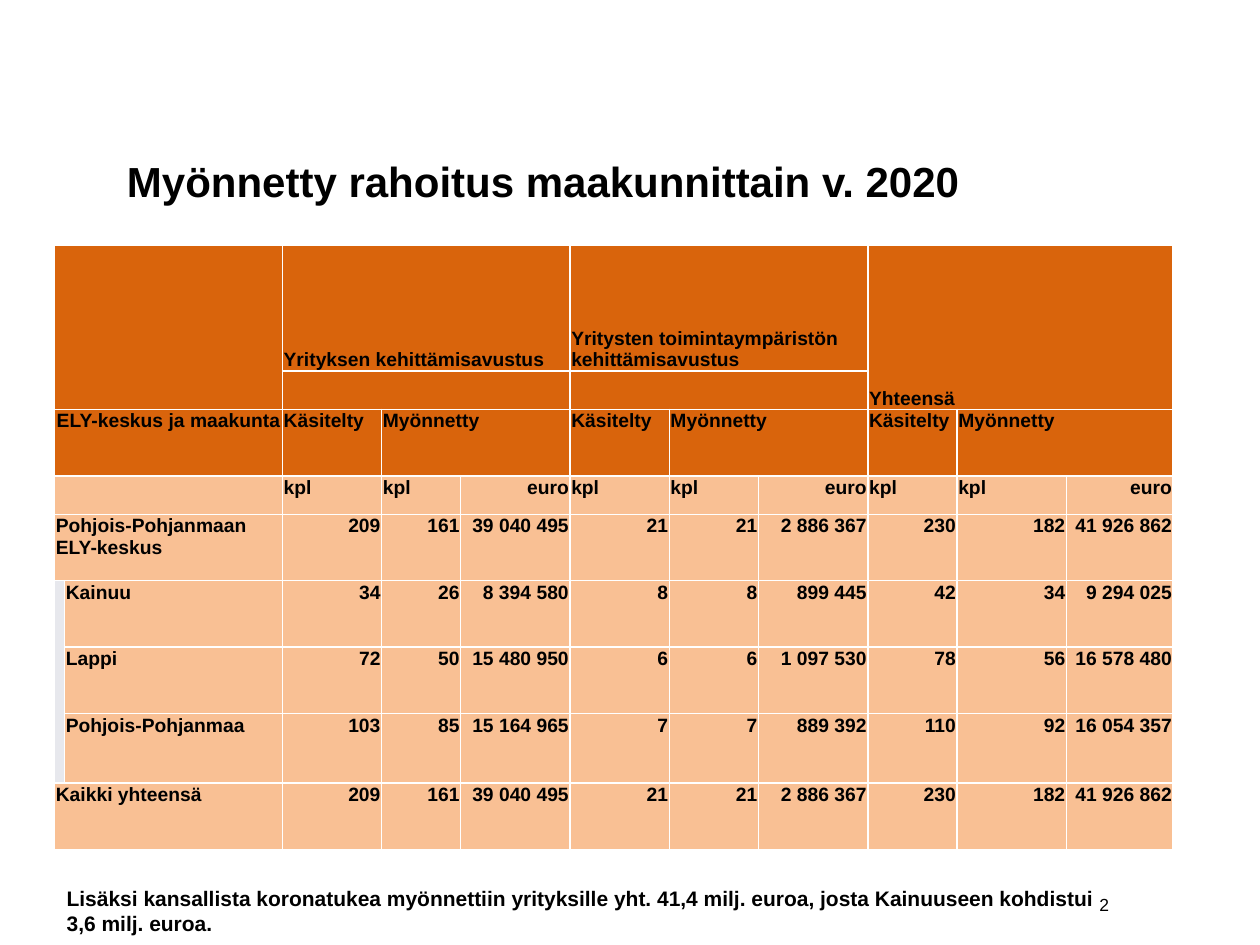
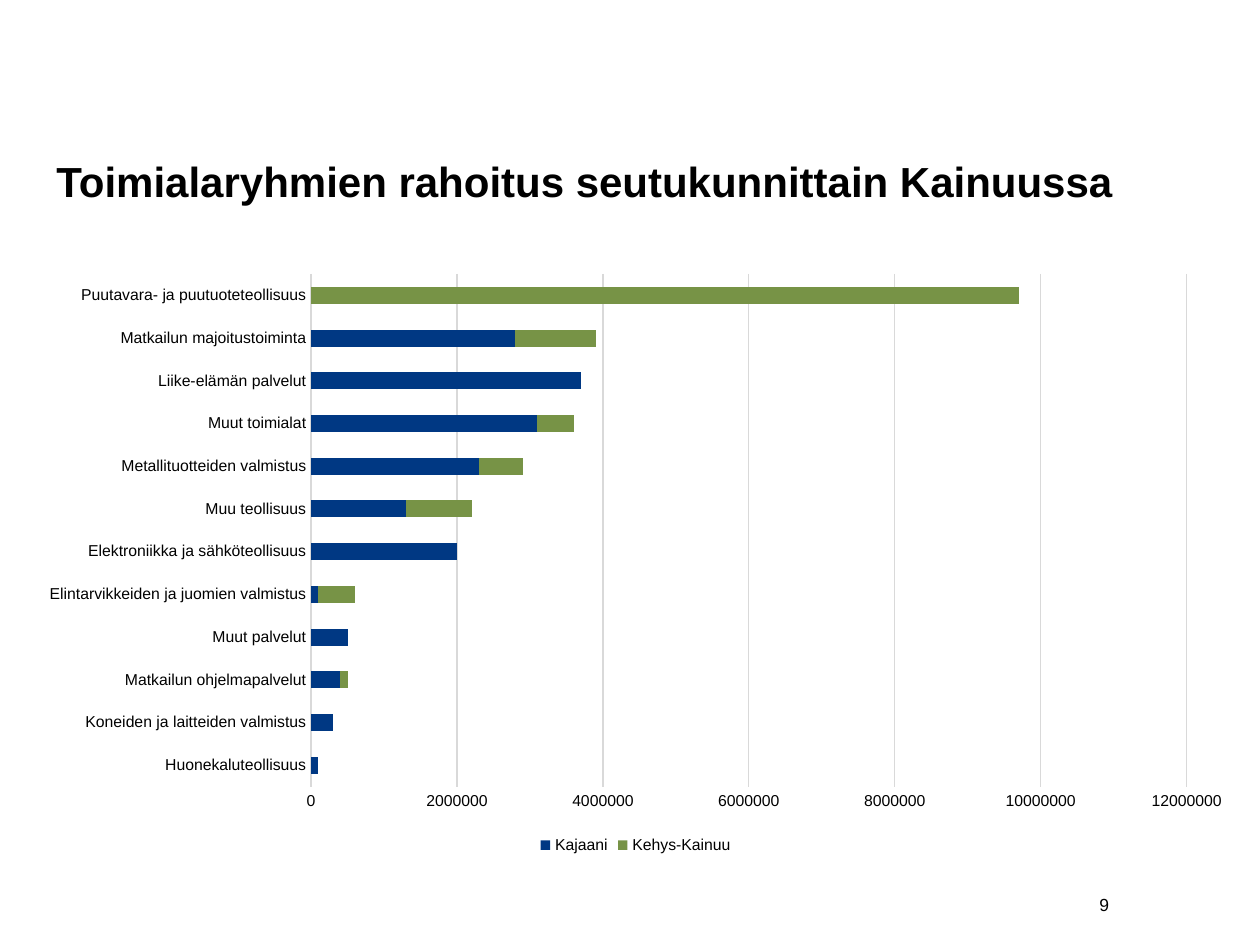
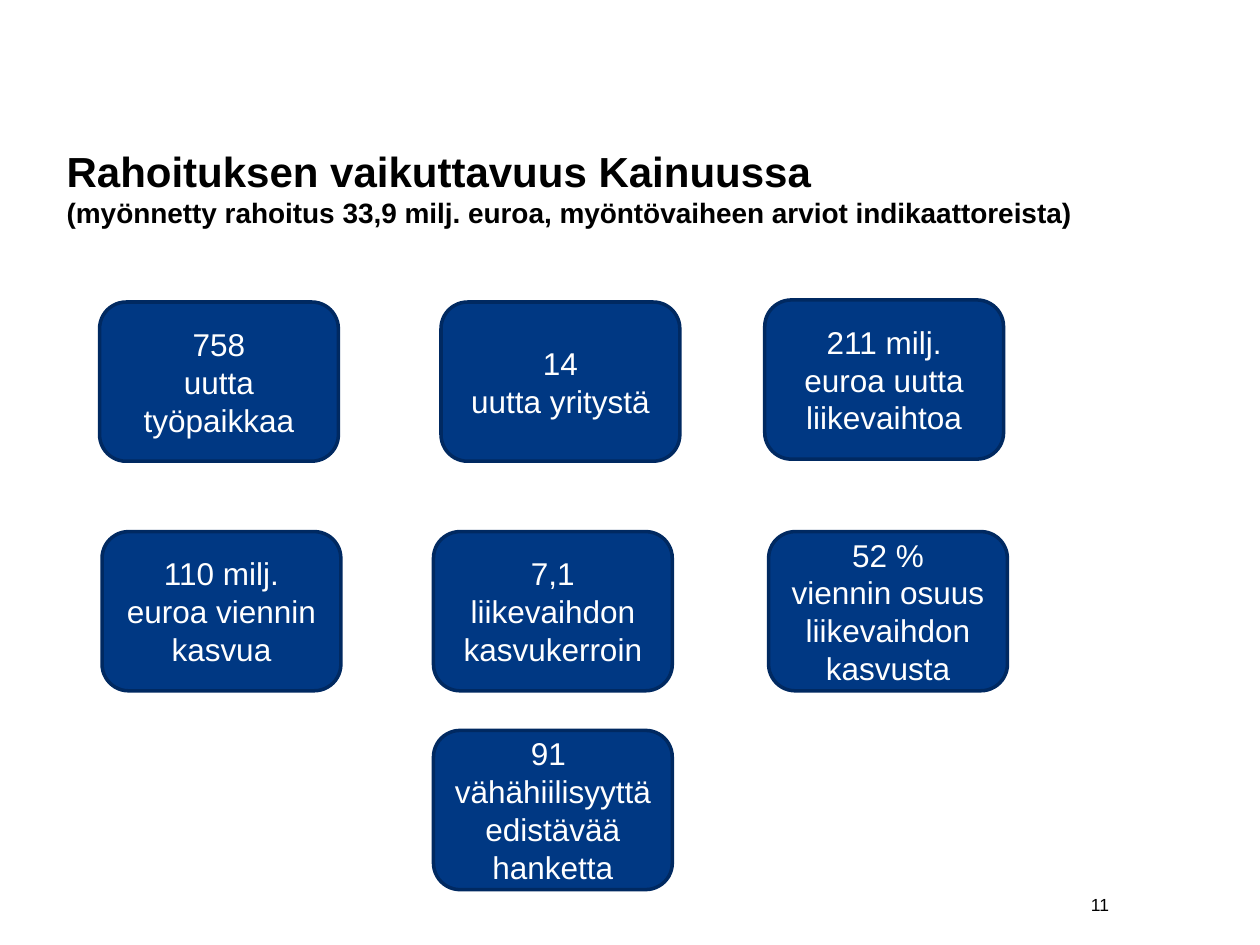
from dataclasses import dataclass

from lxml import etree
from pptx import Presentation
from pptx.chart.data import CategoryChartData
from pptx.dml.color import RGBColor
from pptx.enum.chart import XL_CHART_TYPE, XL_LEGEND_POSITION, XL_TICK_MARK
from pptx.enum.shapes import MSO_SHAPE
from pptx.enum.text import MSO_ANCHOR, PP_ALIGN
from pptx.oxml.ns import qn
from pptx.util import Pt

TOP, MIDDLE, BOTTOM = MSO_ANCHOR.TOP, MSO_ANCHOR.MIDDLE, MSO_ANCHOR.BOTTOM
LEFT, CENTER, RIGHT = PP_ALIGN.LEFT, PP_ALIGN.CENTER, PP_ALIGN.RIGHT
BAR_STACKED = XL_CHART_TYPE.BAR_STACKED
LEGEND_BOTTOM = XL_LEGEND_POSITION.BOTTOM
NO_TICK = XL_TICK_MARK.NONE
ROUNDED = MSO_SHAPE.ROUNDED_RECTANGLE

FONT = "Arial"
BLACK = RGBColor(0x00, 0x00, 0x00)
WHITE = RGBColor(0xFF, 0xFF, 0xFF)
ORANGE = RGBColor(0xD9, 0x64, 0x0C)
PEACH = RGBColor(0xF9, 0xC0, 0x94)
PALE_GREY = RGBColor(0xE7, 0xE8, 0xED)
GRID_GREY = RGBColor(0xD9, 0xD9, 0xD9)
BLUE = RGBColor(0x00, 0x38, 0x83)
DARK_BLUE = RGBColor(0x00, 0x29, 0x61)
GREEN = RGBColor(0x77, 0x93, 0x46)


@dataclass(frozen=True)
class Area:
    left: float
    top: float
    width: float
    height: float

    def lengths(self):
        return Pt(self.left), Pt(self.top), Pt(self.width), Pt(self.height)


@dataclass(frozen=True)
class Merge:
    row: int
    column: int
    rows: int
    columns: int


@dataclass(frozen=True)
class Indicator:
    left: float
    top: float
    lines: tuple


@dataclass(frozen=True)
class Region:
    name: str
    color: RGBColor
    millions: tuple


PAGE_NUMBER_AREA = Area(609.1, 502.6, 31.7, 28.1)

TABLE_AREA = Area(31.2, 139.9, 639.3, 345.5)
COLUMN_WIDTHS = (5.7, 124.5, 56.7, 45.2, 62.5, 56.7, 51, 62.5, 51, 62.5, 61)
ROW_HEIGHTS = (72, 22, 38, 22, 38, 38, 38, 39.5, 38)
HEADER_ROWS = 3
FIRST_NUMBER_ROW = 4
FIRST_NUMBER_COLUMN = 2
PROVINCE_ROWS = range(5, 8)
FUNDING_ROWS = (
    ("", "", "Yrityksen kehittämisavustus", "", "",
     "Yritysten toimintaympäristön kehittämisavustus", "", "", "Yhteensä", "", ""),
    ("",) * 11,
    ("ELY-keskus ja maakunta", "") + ("Käsitelty", "Myönnetty", "") * 3,
    ("", "") + ("kpl", "kpl", "euro") * 3,
    ("Pohjois-Pohjanmaan ELY-keskus", "", "209", "161", "39 040 495",
     "21", "21", "2 886 367", "230", "182", "41 926 862"),
    ("", "Kainuu", "34", "26", "8 394 580", "8", "8", "899 445", "42", "34", "9 294 025"),
    ("", "Lappi", "72", "50", "15 480 950", "6", "6", "1 097 530", "78", "56", "16 578 480"),
    ("", "Pohjois-Pohjanmaa", "103", "85", "15 164 965",
     "7", "7", "889 392", "110", "92", "16 054 357"),
    ("Kaikki yhteensä", "", "209", "161", "39 040 495",
     "21", "21", "2 886 367", "230", "182", "41 926 862"),
)
MERGES = (
    Merge(0, 0, 2, 2), Merge(0, 8, 2, 3), Merge(5, 0, 3, 1),
    *(Merge(row, column, 1, 3) for row in (0, 1) for column in (2, 5)),
    *(Merge(2, column, 1, 2) for column in (3, 6, 9)),
    *(Merge(row, 0, 1, 2) for row in (2, 3, 4, 8)),
)

INDUSTRIES = (
    "Huonekaluteollisuus", "Koneiden ja laitteiden valmistus",
    "Matkailun ohjelmapalvelut", "Muut palvelut",
    "Elintarvikkeiden ja juomien valmistus", "Elektroniikka ja sähköteollisuus",
    "Muu teollisuus", "Metallituotteiden valmistus", "Muut toimialat",
    "Liike-elämän palvelut", "Matkailun majoitustoiminta",
    "Puutavara- ja puutuoteteollisuus",
)
REGIONS = (
    Region("Kajaani", BLUE,
           (0.1, 0.3, 0.4, 0.5, 0.1, 2, 1.3, 2.3, 3.1, 3.7, 2.8, None)),
    Region("Kehys-Kainuu", GREEN,
           (None, 0, 0.1, None, 0.5, None, 0.9, 0.6, 0.5, 0, 1.1, 9.7)),
)

INDICATOR_WIDTH, INDICATOR_HEIGHT = 136.5, 91
INDICATORS = (
    Indicator(56.9, 172.6, ("758", "uutta työpaikkaa")),
    Indicator(252, 172.6, ("14", "uutta yritystä")),
    Indicator(437, 171.4, ("211 milj. euroa uutta liikevaihtoa",)),
    Indicator(58.3, 303.8, ("110 milj. euroa viennin kasvua",)),
    Indicator(247.7, 303.8, ("7,1", "liikevaihdon kasvukerroin")),
    Indicator(439.2, 303.8, ("52 %", "viennin osuus liikevaihdon kasvusta")),
    Indicator(247.7, 417.4, ("91 ", "vähähiilisyyttä edistävää hanketta")),
)


def style_font(font, size: float, color: RGBColor = BLACK, bold: bool = False) -> None:
    font.name = FONT
    font.size = Pt(size)
    font.bold = bold
    font.color.rgb = color


def write_lines(frame, lines, size: float, color: RGBColor = BLACK,
                bold: bool = False, align=LEFT) -> None:
    """Fill a text frame with one paragraph per line."""
    frame.word_wrap = True
    for index, line in enumerate(lines):
        para = frame.add_paragraph() if index else frame.paragraphs[0]
        para.text = line
        para.alignment = align
        style_font(para.font, size, color, bold)


def add_text(page, area: Area, lines, size: float, bold: bool = False,
             align=LEFT, anchor=TOP):
    box = page.shapes.add_textbox(*area.lengths())
    frame = box.text_frame
    frame.vertical_anchor = anchor
    write_lines(frame, lines, size, bold=bold, align=align)
    return frame


def add_page(deck, title: str, title_area: Area, number: int, subtitle: str = ""):
    """Add a blank page with its title, optional subtitle and page number."""
    page = deck.slides.add_slide(deck.slide_layouts[6])
    frame = add_text(page, title_area, [title], 24, bold=True)
    frame.margin_top = Pt(6)
    if subtitle:
        para = frame.paragraphs[0]
        para.add_line_break()
        span = para.add_run()
        span.text = subtitle
        span.font.size = Pt(16)
    add_text(page, PAGE_NUMBER_AREA, [str(number)], 10, align=RIGHT, anchor=MIDDLE)
    return page


def add_cell_borders(cell) -> None:
    properties = cell._tc.get_or_add_tcPr()
    for side in ("a:lnL", "a:lnR", "a:lnT", "a:lnB"):
        line = etree.SubElement(properties, qn(side), w=str(Pt(1)))
        fill = etree.SubElement(line, qn("a:solidFill"))
        etree.SubElement(fill, qn("a:srgbClr"), val=str(WHITE))


def cell_color(row: int, column: int) -> RGBColor:
    if row < HEADER_ROWS:
        return ORANGE
    if column == 0 and row in PROVINCE_ROWS:
        return PALE_GREY
    return PEACH


def cell_alignment(row: int, column: int, text: str):
    if row == HEADER_ROWS - 1 and column == 0:
        return CENTER
    is_number = row >= FIRST_NUMBER_ROW and column >= FIRST_NUMBER_COLUMN
    return RIGHT if is_number or text == "euro" else LEFT


def add_funding_table(page) -> None:
    table = page.shapes.add_table(
        len(ROW_HEIGHTS), len(COLUMN_WIDTHS), *TABLE_AREA.lengths()).table
    table.first_row = False
    table.horz_banding = False
    for column, width in zip(table.columns, COLUMN_WIDTHS):
        column.width = Pt(width)
    for row, height in zip(table.rows, ROW_HEIGHTS):
        row.height = Pt(height)
    for row, texts in enumerate(FUNDING_ROWS):
        for column, text in enumerate(texts):
            cell = table.cell(row, column)
            cell.margin_left = cell.margin_right = cell.margin_top = Pt(0.7)
            cell.margin_bottom = Pt(0)
            cell.vertical_anchor = BOTTOM if row == 0 else TOP
            para = cell.text_frame.paragraphs[0]
            para.text = text
            para.alignment = cell_alignment(row, column, text)
            style_font(para.font, 11, bold=True)
            add_cell_borders(cell)
            cell.fill.solid()
            cell.fill.fore_color.rgb = cell_color(row, column)
    for merge in MERGES:
        last = table.cell(merge.row + merge.rows - 1, merge.column + merge.columns - 1)
        table.cell(merge.row, merge.column).merge(last)


def style_line(line, color: RGBColor, width: float) -> None:
    line.color.rgb = color
    line.width = Pt(width)


def add_industry_chart(page, area: Area) -> None:
    data = CategoryChartData(number_format="0")
    data.categories = INDUSTRIES
    for region in REGIONS:
        data.add_series(region.name, [
            None if value is None else round(value * 1_000_000)
            for value in region.millions])
    chart = page.shapes.add_chart(BAR_STACKED, *area.lengths(), data).chart
    style_font(chart.font, 10)
    chart.has_title = False
    chart.has_legend = True
    chart.legend.position = LEGEND_BOTTOM
    chart.legend.include_in_layout = False
    style_font(chart.legend.font, 9)

    plot = chart.plots[0]
    plot.gap_width = 150
    plot.overlap = 100
    plot.vary_by_categories = False
    for series, region in zip(plot.series, REGIONS):
        series.format.fill.solid()
        series.format.fill.fore_color.rgb = region.color

    for axis in (chart.category_axis, chart.value_axis):
        axis.major_tick_mark = axis.minor_tick_mark = NO_TICK
        style_font(axis.tick_labels.font, 9)
    style_line(chart.category_axis.format.line, GRID_GREY, 0.75)
    amounts = chart.value_axis
    amounts.minimum_scale, amounts.maximum_scale = 0, 12_000_000
    amounts.major_unit = 2_000_000
    amounts.format.line.fill.background()
    amounts.has_major_gridlines = True
    style_line(amounts.major_gridlines.format.line, GRID_GREY, 0.75)
    amounts.tick_labels.number_format = "0"
    amounts.tick_labels.number_format_is_linked = False


def add_indicator(page, indicator: Indicator) -> None:
    area = Area(indicator.left, indicator.top, INDICATOR_WIDTH, INDICATOR_HEIGHT)
    box = page.shapes.add_shape(ROUNDED, *area.lengths())
    box.shadow.inherit = False
    box.fill.solid()
    box.fill.fore_color.rgb = BLUE
    style_line(box.line, DARK_BLUE, 2)
    box.text_frame.vertical_anchor = MIDDLE
    write_lines(box.text_frame, indicator.lines, 18, WHITE, align=CENTER)


def main() -> None:
    deck = Presentation()
    deck.slide_width, deck.slide_height = Pt(720), Pt(540)

    funding = add_page(deck, "Myönnetty rahoitus maakunnittain v. 2020",
                       Area(65.5, 82.8, 521.3, 46), 2)
    add_funding_table(funding)
    add_text(funding, Area(31, 502.6, 645, 36), [
        "Lisäksi kansallista koronatukea myönnettiin yrityksille yht. 41,4 milj. euroa, "
        "josta Kainuuseen kohdistui",
        "3,6 milj. euroa.",
    ], 12, bold=True)

    industries = add_page(deck, "Toimialaryhmien rahoitus seutukunnittain Kainuussa",
                          Area(25.2, 82.8, 623.5, 80), 9)
    add_industry_chart(industries, Area(14.4, 149.8, 697.7, 341.3))

    impact = add_page(deck, "Rahoituksen vaikuttavuus Kainuussa",
                      Area(31, 77, 629.3, 60.5), 11,
                      "(myönnetty rahoitus 33,9 milj. euroa, "
                      "myöntövaiheen arviot indikaattoreista)")
    for indicator in INDICATORS:
        add_indicator(impact, indicator)

    deck.save("out.pptx")


if __name__ == "__main__":
    main()
